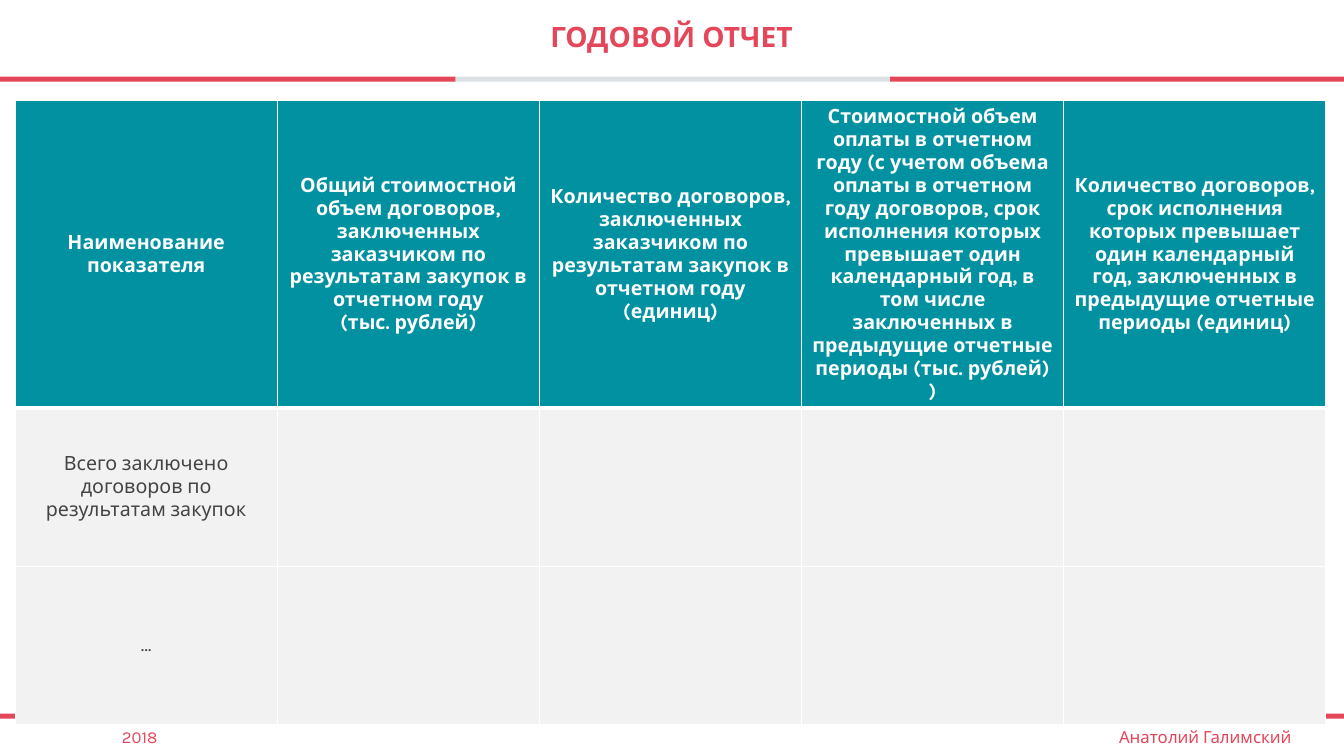
from lxml.etree import SubElement
from pptx import Presentation
from pptx.dml.color import RGBColor
from pptx.enum.shapes import MSO_SHAPE
from pptx.enum.text import MSO_ANCHOR, PP_ALIGN
from pptx.oxml.ns import qn
from pptx.util import Inches, Pt

RED, GREY, TEAL = "E4465A", "DBE1E4", "0291A0"
PALE, DARK, WHITE = "F2F2F2", "444444", "FFFFFF"

HEADERS = [
    ["Наименование показателя"],
    ["Общий стоимостной объем договоров, заключенных заказчиком "
     "по результатам закупок в отчетном году", "(тыс. рублей)"],
    ["Количество договоров, заключенных заказчиком "
     "по результатам закупок в отчетном году", "(единиц)"],
    ["Стоимостной объем оплаты в отчетном году (с учетом объема оплаты "
     "в отчетном году договоров, срок исполнения которых превышает один "
     "календарный год, в том числе заключенных в предыдущие отчетные "
     "периоды (тыс. рублей)", ")"],
    ["Количество договоров, срок исполнения которых превышает один "
     "календарный год, заключенных в предыдущие отчетные периоды (единиц)"],
]
INDICATORS = ["Всего заключено договоров по результатам закупок", "…"]


def color(value):
    return RGBColor.from_string(value)


class ReportSlide:
    font = "Karla"

    def __init__(self, deck):
        self.page = deck.slides.add_slide(deck.slide_layouts[5])

    def fill_text(self, frame, lines, size, tone, bold=False):
        frame.text = "\n".join(lines)
        for para in frame.paragraphs:
            para.alignment = PP_ALIGN.CENTER
            para.font.name = self.font
            para.font.size = Pt(size)
            para.font.bold = bold
            para.font.color.rgb = color(tone)

    def title(self, text, left, top, width, height):
        box = self.page.shapes.title
        box.left, box.top = Inches(left), Inches(top)
        box.width, box.height = Inches(width), Inches(height)
        frame = box.text_frame
        frame.vertical_anchor = MSO_ANCHOR.MIDDLE
        self.fill_text(frame, [text], 20, RED, bold=True)
        frame.paragraphs[0].line_spacing = 0.9

    def bar(self, left, top, width, tone):
        bar = self.page.shapes.add_shape(
            MSO_SHAPE.RECTANGLE, Inches(left), Inches(top), Inches(width), Inches(0.05))
        bar.shadow.inherit = False
        bar.fill.solid()
        bar.fill.fore_color.rgb = color(tone)
        bar.line.fill.background()

    def stripe(self, top):
        for left, right, tone in [(0, 4.52, RED), (4.52, 8.83, GREY), (8.83, 13.33, RED)]:
            self.bar(left, top, right - left, tone)

    def label(self, text, left):
        box = self.page.shapes.add_textbox(
            Inches(left), Inches(7.16), Inches(2.77), Inches(0.3))
        box.text_frame.word_wrap = True
        self.fill_text(box.text_frame, [text], 12, RED)

    def cell(self, cell, lines, fill, tone, bold, bottom):
        cell.fill.solid()
        cell.fill.fore_color.rgb = color(fill)
        cell.vertical_anchor = MSO_ANCHOR.MIDDLE
        if lines:
            self.fill_text(cell.text_frame, lines, 14, tone, bold)
        # Borders precede the fill in the cell properties
        properties = cell._tc.get_or_add_tcPr()
        for index, (side, width) in enumerate(
                [("lnL", 1), ("lnR", 1), ("lnT", 1), ("lnB", bottom)]):
            line = SubElement(properties, qn(f"a:{side}"), w=str(Pt(width)))
            solid = SubElement(line, qn("a:solidFill"))
            SubElement(solid, qn("a:srgbClr"), val=WHITE)
            properties.insert(index, line)

    def table(self, headers, indicators, left, top, column_width, heights):
        grid = self.page.shapes.add_table(
            len(heights), len(headers), Inches(left), Inches(top),
            Inches(column_width * len(headers)), Inches(sum(heights))).table
        for column in grid.columns:
            column.width = Inches(column_width)
        for row, height in zip(grid.rows, heights):
            row.height = Inches(height)
        for column, lines in enumerate(headers):
            self.cell(grid.cell(0, column), lines, TEAL, WHITE, True, 3)
            for row, name in enumerate(indicators, 1):
                content = [name] if column == 0 else []
                self.cell(grid.cell(row, column), content, PALE, DARK, False, 1)


def main():
    deck = Presentation()
    deck.slide_width, deck.slide_height = Inches(13.33), Inches(7.5)
    slide = ReportSlide(deck)

    # Stripes and title
    for top in (0.76, 7.08):
        slide.stripe(top)
    slide.title("ГОДОВОЙ ОТЧЕТ", 2.14, 0, 9.04, 0.76)

    # Report table
    slide.table(HEADERS, INDICATORS, 0.15, 1, 2.6, [2.78, 1.57, 1.57])

    # Footer
    slide.label("2018", 0)
    slide.label("Анатолий Галимский", 10.57)

    deck.save("out.pptx")


if __name__ == "__main__":
    main()
